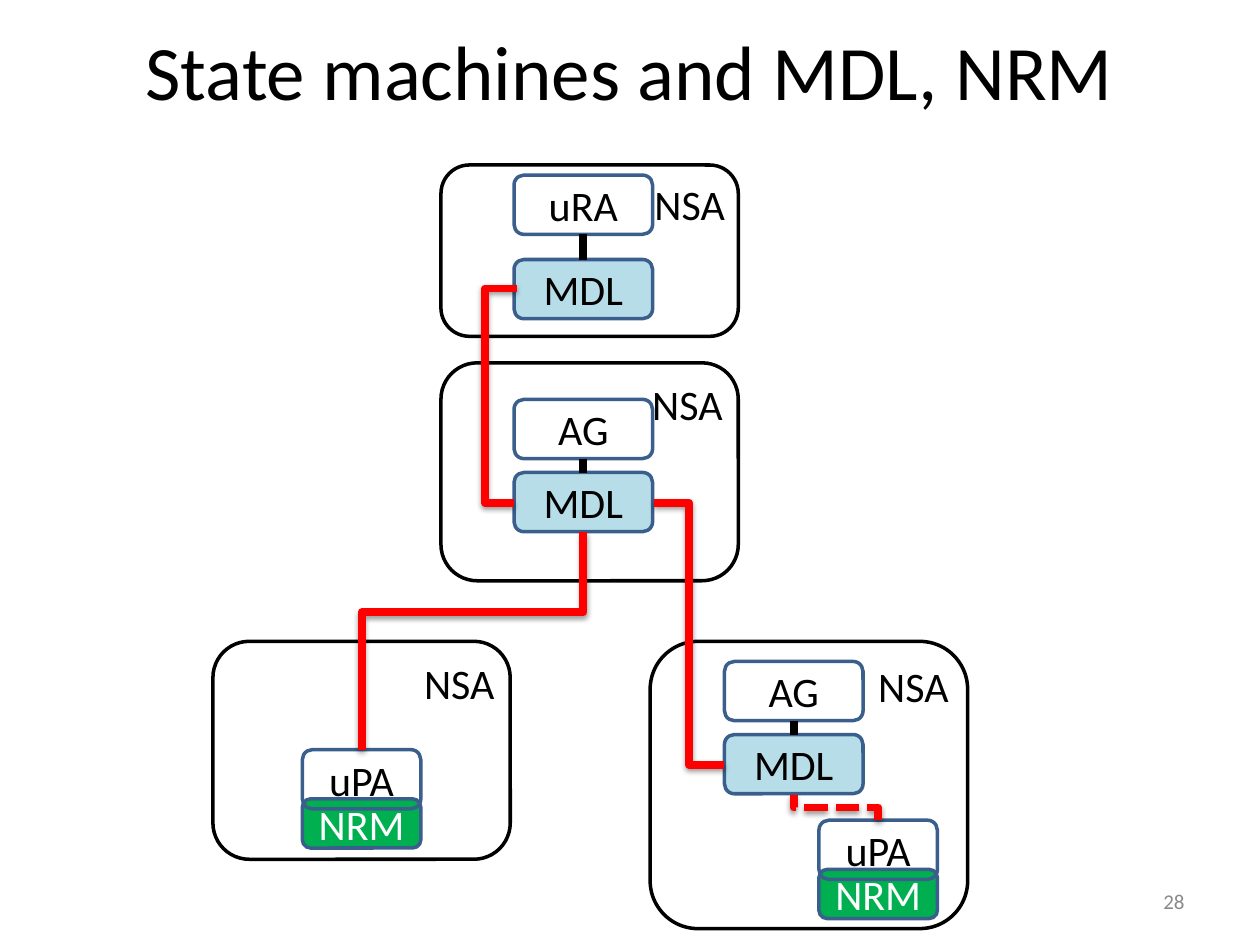
from lxml import etree
from pptx import Presentation
from pptx.dml.color import RGBColor
from pptx.enum.dml import MSO_LINE
from pptx.enum.shapes import MSO_CONNECTOR, MSO_SHAPE
from pptx.enum.text import MSO_ANCHOR, PP_ALIGN
from pptx.oxml.ns import qn
from pptx.util import Inches, Pt

ROUNDED = MSO_SHAPE.ROUNDED_RECTANGLE
STRAIGHT, ELBOW = MSO_CONNECTOR.STRAIGHT, MSO_CONNECTOR.ELBOW
TOP, MIDDLE = MSO_ANCHOR.TOP, MSO_ANCHOR.MIDDLE
CENTER, RIGHT = PP_ALIGN.CENTER, PP_ALIGN.RIGHT
DASHED = MSO_LINE.SQUARE_DOT
SITE_TOP, SITE_BOTTOM = 0, 2

THEME = {
    "font": "Calibri",
    "black": "000000", "white": "FFFFFF", "grey": "898989",
    "border": "3A5F8C", "mdl": "B7DEE8", "nrm": "00B050", "link": "FF0000",
    "title_size": 44, "box_size": 24, "number_size": 12,
    "outline": 2, "link_width": 4.5,
}

TITLE = "State machines and MDL, NRM"
PAGE_NUMBER = "28"

# left, top, width, height of each NSA frame
FRAMES = [
    (3.5, 1.31, 2.36, 1.36),
    (3.5, 2.88, 2.36, 1.73),
    (1.69, 5.09, 2.36, 1.73),
    (5.16, 5.09, 2.52, 2.28),
]
# role, left, top of the role box, top of the MDL box below it
MDL_STACKS = [
    ("uRA", 4.08, 1.39, 2.06),
    ("AG", 4.08, 3.17, 3.75),
    ("AG", 5.75, 5.25, 5.83),
]
MDL_SIZE = (1.1, 0.47)
# left, top of each uPA box; its NRM box is tucked underneath
PROVIDERS = [(6.5, 6.51), (2.4, 5.95)]
UPA_SIZE, NRM_SIZE, NRM_DROP = (0.94, 0.47), (0.94, 0.39), 0.39

# start, end, x of the upright middle leg
SIDE_LINKS = [
    ((4.1, 2.29), (4.08, 3.99), 3.85),
    ((5.75, 6.07), (5.19, 3.99), 5.47),
]
# start, end, y of the level middle leg, dash style
RISING_LINKS = [
    ((2.87, 5.95), (4.63, 4.22), 4.86, None),
    ((6.97, 6.51), (6.3, 6.31), 6.41, DASHED),
]


def rgb(name):
    return RGBColor.from_string(THEME[name])


def write(shape, text, size, color, align, anchor):
    frame = shape.text_frame
    frame.word_wrap = True
    frame.vertical_anchor = anchor
    para = frame.paragraphs[0]
    para.text = text
    para.alignment = align
    para.font.name = THEME["font"]
    para.font.size = Pt(THEME[size])
    para.font.color.rgb = rgb(color)
    return frame


def add_box(slide, text, at, fill=None, border="border", color="black",
            align=CENTER, anchor=MIDDLE):
    box = slide.shapes.add_shape(ROUNDED, *map(Inches, at))
    box.shadow.inherit = False
    if fill:
        box.fill.solid()
        box.fill.fore_color.rgb = rgb(fill)
    else:
        box.fill.background()
    box.line.color.rgb = rgb(border)
    box.line.width = Pt(THEME["outline"])
    frame = write(box, text, "box_size", color, align, anchor)
    frame.margin_left = frame.margin_right = Inches(0.04)
    frame.margin_top = frame.margin_bottom = Inches(0.04)
    return box


def add_line(slide, kind, start, end, color):
    """Add a connector and return it with its empty effect list."""
    line = slide.shapes.add_connector(kind, *map(Inches, (*start, *end)))
    line.line.color.rgb = rgb(color)
    line.line.width = Pt(THEME["link_width"])
    effects = etree.SubElement(line._element.spPr, qn("a:effectLst"))
    return line, effects


def add_elbow(slide, start, end, bend):
    """Add a red elbow; bend is the share of the run before the middle leg."""
    line, effects = add_line(slide, ELBOW, start, end, "link")
    shadow = etree.SubElement(
        effects, qn("a:outerShdw"), blurRad=str(Pt(3.1)), dist=str(Pt(1.6)),
        dir="5400000", rotWithShape="0")
    tint = etree.SubElement(shadow, qn("a:srgbClr"), val=THEME["black"])
    etree.SubElement(tint, qn("a:alpha"), val="38000")
    guides = line._element.spPr.find(qn("a:prstGeom")).get_or_add_avLst()
    etree.SubElement(guides, qn("a:gd"), name="adj1",
                     fmla=f"val {round(bend * 100000)}")
    return line


def add_rising_elbow(slide, start, end, middle_y, dash):
    """Add an elbow that leaves upwards: a level one turned by 270 degrees."""
    (x1, y1), (x2, y2) = start, end
    center_x, center_y = (x1 + x2) / 2, (y1 + y2) / 2
    half_run, half_rise = (y1 - y2) / 2, (x2 - x1) / 2
    line = add_elbow(slide, (center_x - half_run, center_y - half_rise),
                     (center_x + half_run, center_y + half_rise),
                     (y1 - middle_y) / (y1 - y2))
    line._element.spPr.find(qn("a:xfrm")).set("rot", str(270 * 60000))
    if dash:
        line.line.dash_style = dash


def main():
    deck = Presentation()
    deck.slide_width, deck.slide_height = Inches(10), Inches(7.5)
    slide = deck.slides.add_slide(deck.slide_layouts[5])

    title = slide.shapes.title
    title.left, title.top = Inches(0.5), Inches(0.3)
    title.width, title.height = Inches(9), Inches(1.25)
    frame = write(title, TITLE, "title_size", "black", CENTER, MIDDLE)
    frame.margin_bottom = Inches(0.8)

    for at in FRAMES:
        add_box(slide, "NSA", at, border="black", align=RIGHT, anchor=TOP)
    for left, top in PROVIDERS:
        add_box(slide, "NRM", (left, top + NRM_DROP, *NRM_SIZE),
                fill="nrm", color="white")
        add_box(slide, "uPA", (left, top, *UPA_SIZE))
    for role, left, top, mdl_top in MDL_STACKS:
        role_box = add_box(slide, role, (left, top, *MDL_SIZE))
        mdl_box = add_box(slide, "MDL", (left, mdl_top, *MDL_SIZE), fill="mdl")
        line, _ = add_line(slide, STRAIGHT, (left, top), (left, mdl_top), "black")
        line.begin_connect(role_box, SITE_BOTTOM)
        line.end_connect(mdl_box, SITE_TOP)

    for start, end, middle_x in SIDE_LINKS:
        bend = (middle_x - start[0]) / (end[0] - start[0])
        add_elbow(slide, start, end, bend)
    for link in RISING_LINKS:
        add_rising_elbow(slide, *link)

    number = slide.shapes.add_textbox(*map(Inches, (7.17, 6.95, 2.33, 0.4)))
    write(number, PAGE_NUMBER, "number_size", "grey", RIGHT, MIDDLE)
    deck.save("out.pptx")


if __name__ == "__main__":
    main()
